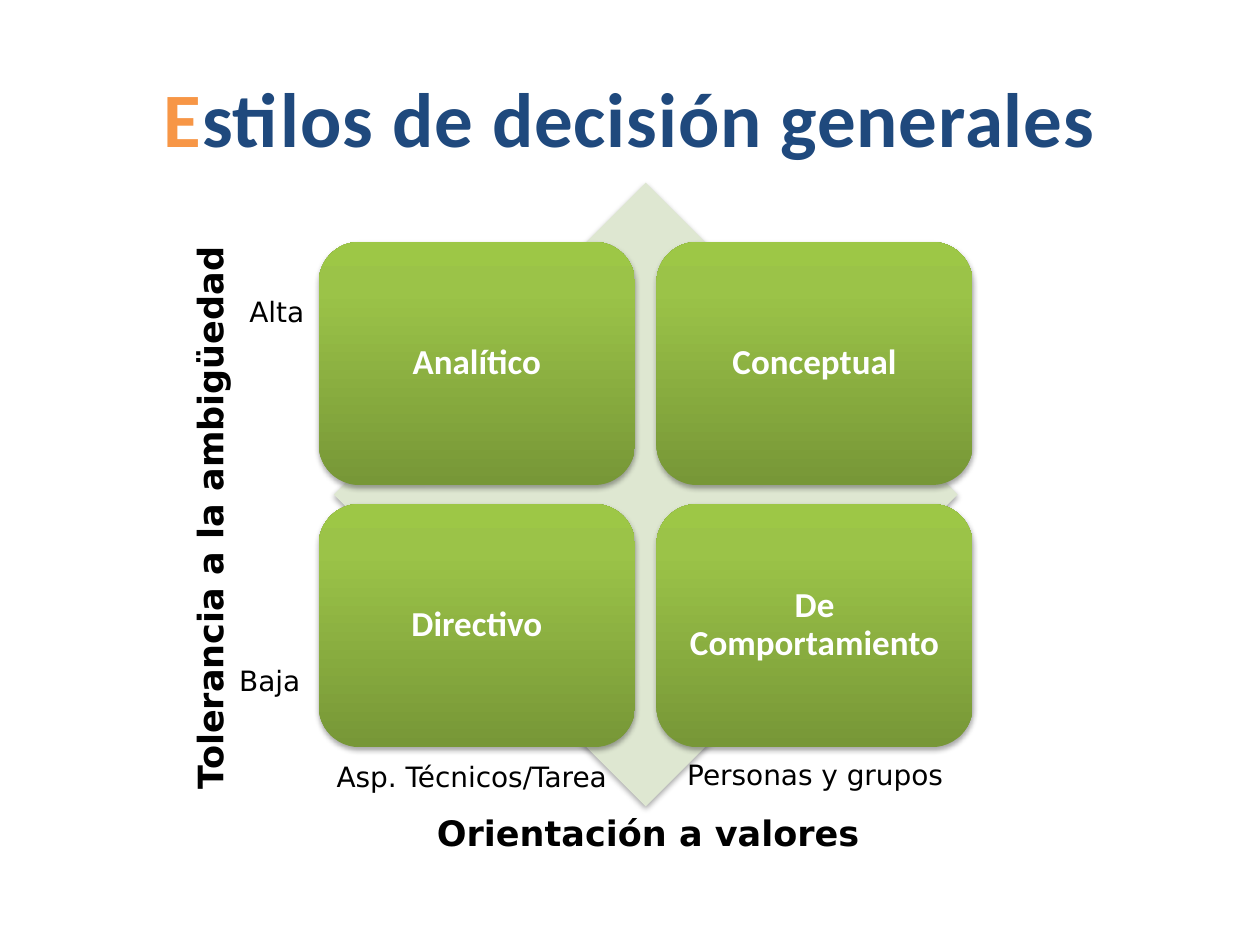
from copy import deepcopy

from lxml import etree
from pptx import Presentation
from pptx.dml.color import RGBColor
from pptx.enum.shapes import MSO_SHAPE
from pptx.enum.text import MSO_ANCHOR, MSO_AUTO_SIZE, PP_ALIGN
from pptx.oxml.ns import qn
from pptx.util import Inches, Pt

DIAMOND, ROUNDED = MSO_SHAPE.DIAMOND, MSO_SHAPE.ROUNDED_RECTANGLE
CENTER, LEFT = PP_ALIGN.CENTER, PP_ALIGN.LEFT
MIDDLE = MSO_ANCHOR.MIDDLE
FIT_SHAPE = MSO_AUTO_SIZE.SHAPE_TO_FIT_TEXT

ORANGE = RGBColor(0xF7, 0x96, 0x46)
NAVY = RGBColor(0x1F, 0x49, 0x7D)
PALE_GREEN = RGBColor(0xDE, 0xE7, 0xD1)
WHITE = RGBColor(0xFF, 0xFF, 0xFF)
BLACK = RGBColor(0, 0, 0)
GREEN_STOPS = (
    (0, RGBColor(0x77, 0x97, 0x37)),
    (0.8, RGBColor(0x9B, 0xC3, 0x48)),
    (1, RGBColor(0x9D, 0xC7, 0x46)),
)

HEADING_FONT, LABEL_FONT = "Calibri", "DejaVu Sans"
STYLES = (("Analítico", "Conceptual"), ("Directivo", "De Comportamiento"))
MATRIX_BOX = (2.65, 1.45, 4.95, 4.95)
CARD_WIDTH, CARD_HEIGHT = 2.51, 1.93
COLUMN_STEP, ROW_STEP = 2.68, 2.08


def place(box):
    """Convert a box in inches to slide lengths."""
    return [Inches(length) for length in box]


def add_run(paragraph, text, size, font_name, color, bold=False):
    """Append a formatted run to a paragraph."""
    run = paragraph.add_run()
    run.text = text
    font = run.font
    font.size, font.name, font.bold = Pt(size), font_name, bold
    font.color.rgb = color
    return run


def add_shadow(shape):
    """Give a shape a soft shadow straight below it."""
    shape.shadow.inherit = False
    effects = shape._element.spPr.find(qn("a:effectLst"))
    shadow = etree.SubElement(
        effects, qn("a:outerShdw"), blurRad=str(Pt(3.1)), dist=str(Pt(1.8)),
        dir="5400000", rotWithShape="0")
    color = etree.SubElement(shadow, qn("a:srgbClr"), val=str(BLACK))
    etree.SubElement(color, qn("a:alpha"), val="35000")


def fill_green(shape):
    """Fill a shape with the green gradient, darkest at the bottom."""
    shape.fill.gradient()
    shape.fill.gradient_angle = 90
    stop_list = shape._element.spPr.find(".//" + qn("a:gsLst"))
    stop_list.append(deepcopy(stop_list[-1]))
    for stop, (position, color) in zip(shape.fill.gradient_stops, GREEN_STOPS):
        stop.position = position
        stop.color.rgb = color


def add_title(slide, box):
    """Write the title with its first letter in orange."""
    title = slide.shapes.title
    title.left, title.top, title.width, title.height = place(box)
    title.text_frame.vertical_anchor = MIDDLE
    paragraph = title.text_frame.paragraphs[0]
    paragraph.alignment = CENTER
    for text, color in (("E", ORANGE), ("stilos de decisión generales", NAVY)):
        run = add_run(paragraph, text, 44, HEADING_FONT, color, True)
        run.font._element.set("spc", "50")


def add_card(shapes, box, text):
    """Add one decision style as a rounded green card."""
    card = shapes.add_shape(ROUNDED, *place(box))
    fill_green(card)
    card.line.fill.background()
    add_shadow(card)
    frame = card.text_frame
    frame.word_wrap = True
    frame.vertical_anchor = MIDDLE
    frame.margin_left = frame.margin_right = Inches(0.08)
    frame.margin_top = frame.margin_bottom = Inches(0.08)
    paragraph = frame.paragraphs[0]
    paragraph.alignment = CENTER
    paragraph.line_spacing = 0.9
    add_run(paragraph, text, 20, HEADING_FONT, WHITE, True)


def add_matrix(slide, box):
    """Draw the diamond with a two by two grid of cards centred on it."""
    shapes = slide.shapes.add_group_shape().shapes
    diamond = shapes.add_shape(DIAMOND, *place(box))
    diamond.fill.solid()
    diamond.fill.fore_color.rgb = PALE_GREEN
    diamond.line.fill.background()
    add_shadow(diamond)
    left, top, width, height = box
    first_left = left + (width - COLUMN_STEP - CARD_WIDTH) / 2
    first_top = top + (height - ROW_STEP - CARD_HEIGHT) / 2
    for row, names in enumerate(STYLES):
        for column, name in enumerate(names):
            card_box = (first_left + column * COLUMN_STEP,
                        first_top + row * ROW_STEP, CARD_WIDTH, CARD_HEIGHT)
            add_card(shapes, card_box, name)


def add_label(slide, box, text, size=16, bold=False, alignment=CENTER, rotation=0):
    """Add an axis name or an axis value."""
    label = slide.shapes.add_textbox(*place(box))
    label.rotation = rotation
    frame = label.text_frame
    frame.word_wrap = True
    frame.auto_size = FIT_SHAPE
    paragraph = frame.paragraphs[0]
    paragraph.alignment = alignment
    add_run(paragraph, text, size, LABEL_FONT, BLACK, bold)


def add_axes(slide, box):
    """Label both axes and their ends around the matrix box."""
    left, top, width, height = box
    bottom = top + height
    add_label(slide, (left - 3.31, top + 2.44, 4.65, 0.44),
              "Tolerancia a la ambigüedad", 20, True, rotation=270)
    add_label(slide, (left + 0.17, bottom - 0.01, 4.65, 0.43),
              "Orientación a valores", 20, True)
    add_label(slide, (left - 0.4, bottom - 0.42, 2.99, 0.37), "Asp. Técnicos/Tarea")
    add_label(slide, (left + 2.43, bottom - 0.44, 2.78, 0.37), "Personas y grupos")
    add_label(slide, (left - 0.77, top + 0.84, 1.02, 0.37), "Alta", alignment=LEFT)
    add_label(slide, (left - 0.85, top + 3.77, 1.02, 0.37), "Baja", alignment=LEFT)


def main():
    """Build and save the slide."""
    presentation = Presentation()
    presentation.slide_width, presentation.slide_height = Inches(10), Inches(7.5)
    slide = presentation.slides.add_slide(presentation.slide_layouts[5])
    add_title(slide, (0.5, 0.3, 9, 1.25))
    add_matrix(slide, MATRIX_BOX)
    add_axes(slide, MATRIX_BOX)
    presentation.save("out.pptx")


if __name__ == "__main__":
    main()
